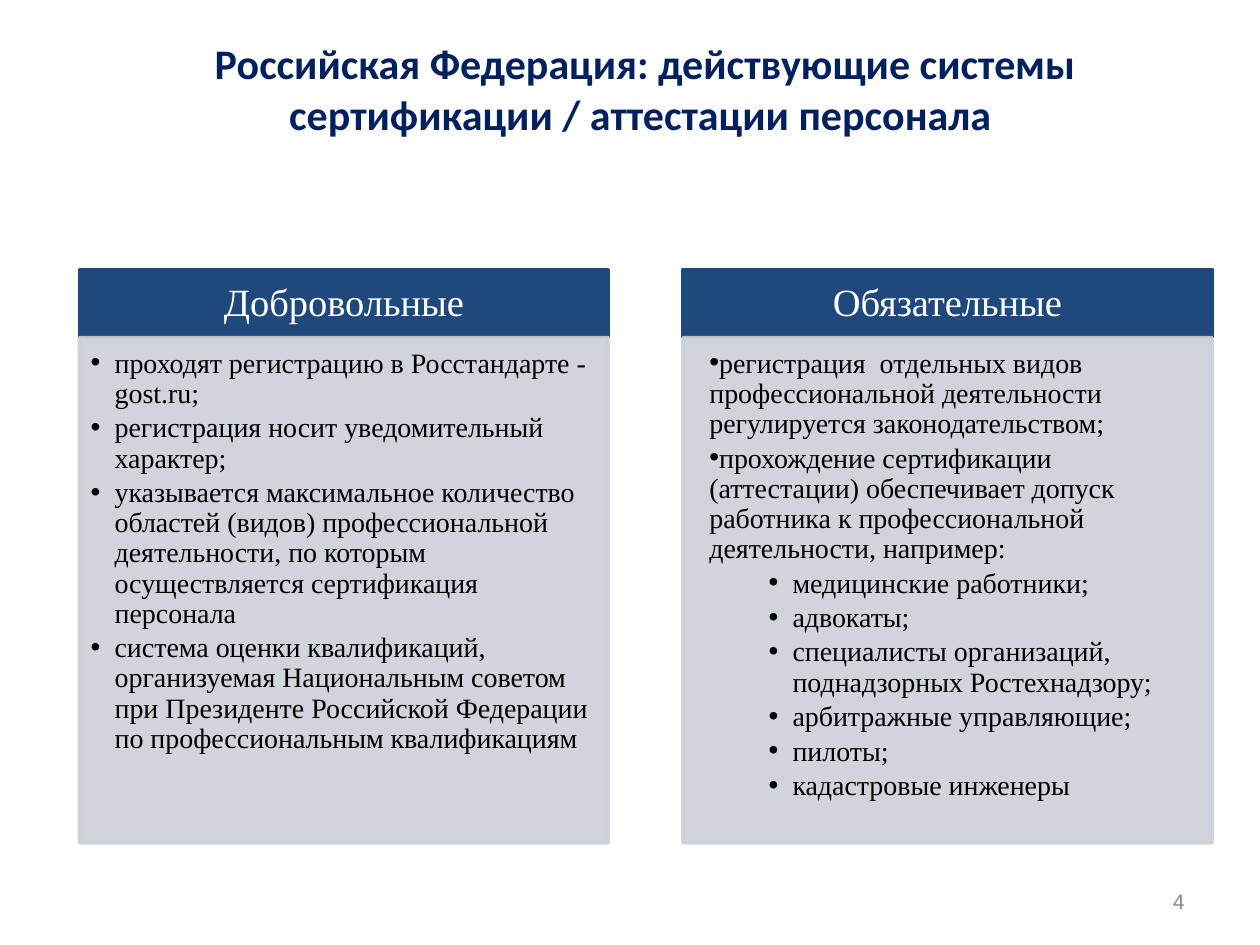
from dataclasses import dataclass

from lxml.etree import SubElement
from pptx import Presentation
from pptx.dml.color import RGBColor
from pptx.enum.shapes import MSO_SHAPE
from pptx.enum.text import MSO_ANCHOR, PP_ALIGN
from pptx.oxml.ns import qn
from pptx.util import Inches, Pt


@dataclass(frozen=True)
class Theme:
    title: str = "002060"
    head: str = "1F497D"
    body: str = "CDD0D7"
    white: str = "FFFFFF"
    black: str = "000000"
    gray: str = "898989"
    sans: str = "Calibri"
    serif: str = "Times New Roman"
    page: str = "Arial"
    title_size: float = 24
    head_size: float = 22
    body_size: float = 16
    page_size: float = 12


THEME = Theme()

TITLE = ("Российская Федерация: действующие системы "
         "сертификации / аттестации персонала ")

# Left margin and first-line indent of each list style
HANG, FLUSH, SUB = (0.19, -0.19), (0.12, 0), (0.78, -0.19)

COLUMNS = [
    ("Добровольные", [
        (HANG, "проходят регистрацию в Росстандарте -  gost.ru;"),
        (HANG, "регистрация носит уведомительный характер;"),
        (HANG, "указывается максимальное количество областей (видов) "
               "профессиональной деятельности, по которым осуществляется "
               "сертификация персонала"),
        (HANG, "система оценки квалификаций, организуемая Национальным "
               "советом при Президенте Российской Федерации по "
               "профессиональным квалификациям"),
    ]),
    ("Обязательные", [
        (FLUSH, "регистрация  отдельных видов профессиональной "
                "деятельности регулируется законодательством;"),
        (FLUSH, "прохождение сертификации (аттестации) обеспечивает допуск "
                "работника к профессиональной деятельности, например:"),
        (SUB, "медицинские работники;"),
        (SUB, "адвокаты;"),
        (SUB, "специалисты организаций, поднадзорных Ростехнадзору;"),
        (SUB, "арбитражные управляющие;"),
        (SUB, "пилоты;"),
        (SUB, "кадастровые инженеры"),
    ]),
]


def set_bullet(para, indent):
    """Give a paragraph a round bullet with its margin and indent."""
    props = para._p.get_or_add_pPr()
    left, first = indent
    props.set("marL", str(Inches(left)))
    props.set("indent", str(Inches(first)))
    props.set("lvl", "2" if indent == SUB else "1")
    SubElement(props, qn("a:buFont"), typeface="Arial")
    SubElement(props, qn("a:buChar"), char="•")


def write(shape, items, *, size, color, font, bold=False,
          align=PP_ALIGN.LEFT, anchor=MSO_ANCHOR.MIDDLE,
          inset=(0.1, 0.05, 0.1, 0.05), line=None, after=0):
    """Fill a shape with (indent, text) items; no indent means no bullet."""
    frame = shape.text_frame
    frame.word_wrap = True
    frame.vertical_anchor = anchor
    (frame.margin_left, frame.margin_top,
     frame.margin_right, frame.margin_bottom) = map(Inches, inset)
    for i, (indent, text) in enumerate(items):
        para = frame.paragraphs[0] if i == 0 else frame.add_paragraph()
        if indent:
            set_bullet(para, indent)
        para.alignment = align
        para.space_after = Pt(after)
        if line:
            para.line_spacing = line
        run = para.add_run()
        run.text = text
        run.font.size = Pt(size)
        run.font.name = font
        run.font.bold = bold
        run.font.color.rgb = RGBColor.from_string(color)


def add_label(slide, box, text, **style):
    label = slide.shapes.add_textbox(*map(Inches, box))
    write(label, [(None, text)], **style)


def add_panel(slide, box, color, alpha=None):
    """Add a rectangle with fill and line alike, alpha in percent."""
    panel = slide.shapes.add_shape(MSO_SHAPE.RECTANGLE, *map(Inches, box))
    panel.shadow.inherit = False
    panel.fill.solid()
    panel.line.width = Pt(2)
    for fill in (panel.fill, panel.line.fill):
        fill.solid()
        fill.fore_color.rgb = RGBColor.from_string(color)
    if alpha:
        for tint in panel._element.spPr.iter(qn("a:srgbClr")):
            SubElement(tint, qn("a:alpha"), val=str(alpha * 1000))
    return panel


def add_column(slide, left, head, items):
    top, width, head_high, body_high = 2.14, 4.2, 0.54, 4.01
    bar = add_panel(slide, (left, top, width, head_high), THEME.head)
    write(bar, [(None, head)], size=THEME.head_size, color=THEME.white,
          font=THEME.serif, align=PP_ALIGN.CENTER,
          inset=(0.17, 0.1, 0.17, 0.1), line=0.9)
    body = add_panel(slide, (left, top + head_high, width, body_high),
                     THEME.body, alpha=90)
    write(body, items, size=THEME.body_size, color=THEME.black,
          font=THEME.serif, anchor=MSO_ANCHOR.TOP,
          inset=(0.09, 0.09, 0.12, 0.14), line=0.9,
          after=0.15 * THEME.body_size)


def main():
    deck = Presentation()
    deck.slide_width, deck.slide_height = Inches(10), Inches(7.5)
    slide = deck.slides.add_slide(deck.slide_layouts[6])

    # Page number and title
    add_label(slide, (7.17, 6.95, 2.33, 0.4), "4", size=THEME.page_size,
              color=THEME.gray, font=THEME.page, align=PP_ALIGN.RIGHT)
    add_label(slide, (0.62, 0.23, 9, 0.94), TITLE, size=THEME.title_size,
              color=THEME.title, font=THEME.sans, bold=True,
              align=PP_ALIGN.CENTER)

    # Two columns
    start, pitch = 0.63, 4.79
    for i, (head, items) in enumerate(COLUMNS):
        add_column(slide, start + i * pitch, head, items)

    deck.save("out.pptx")


if __name__ == "__main__":
    main()
